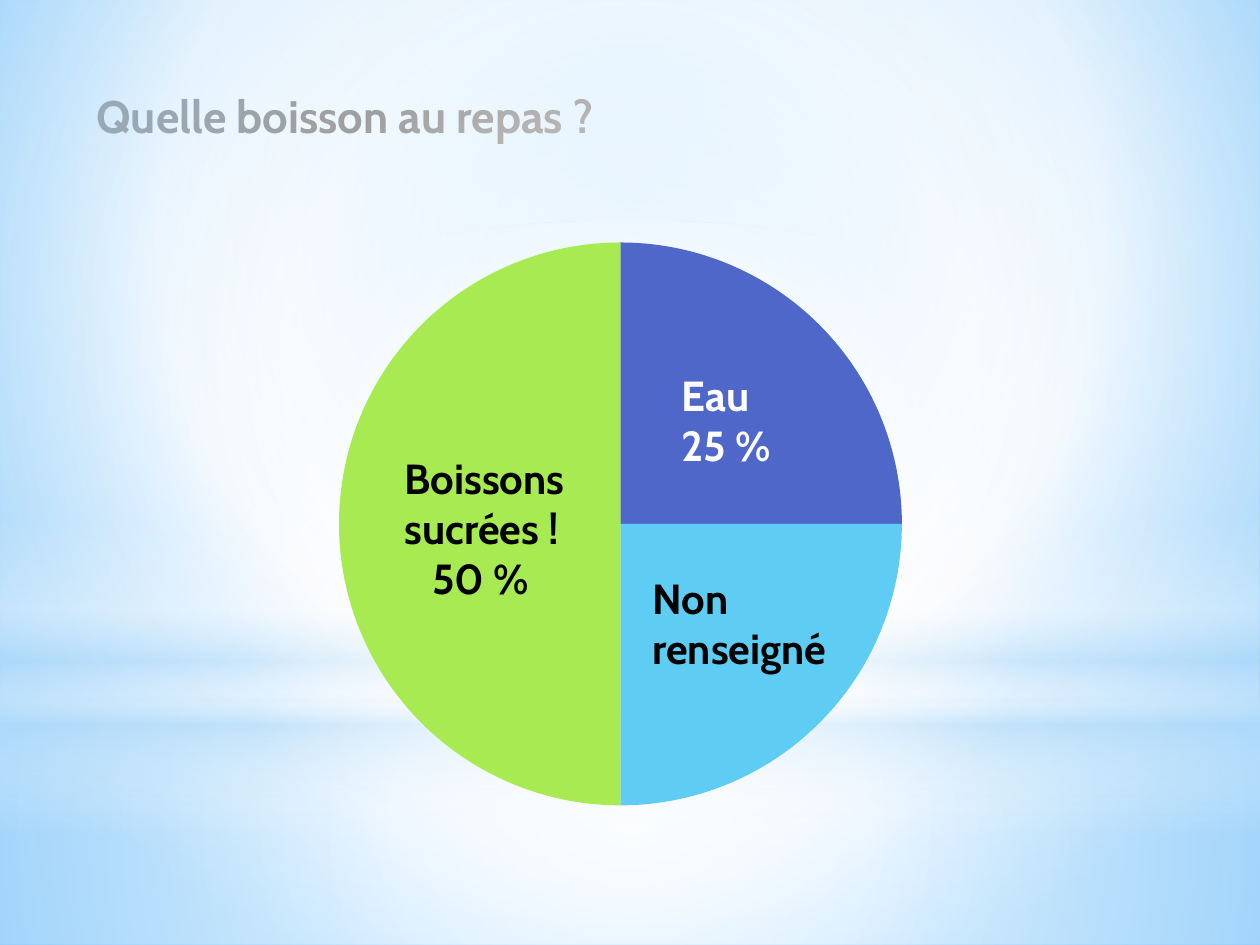
"""Build the slide with a pie chart of drinks taken at meals."""
from lxml import etree
from pptx import Presentation
from pptx.chart.data import CategoryChartData
from pptx.dml.color import RGBColor
from pptx.enum.chart import XL_CHART_TYPE
from pptx.enum.shapes import MSO_SHAPE
from pptx.enum.text import MSO_ANCHOR, MSO_AUTO_SIZE, PP_ALIGN
from pptx.oxml import parse_xml
from pptx.oxml.ns import nsdecls, qn
from pptx.util import Inches, Pt

SCALE = Inches(1) / 126
FONT = "Cabin"
BLACK = RGBColor(0x00, 0x00, 0x00)
WHITE = RGBColor(0xFF, 0xFF, 0xFF)
INDIGO = RGBColor(0x4E, 0x67, 0xC8)
SKY = RGBColor(0x5E, 0xCC, 0xF3)
GREEN = RGBColor(0xA7, 0xEA, 0x52)
PALE = RGBColor(0xB4, 0xDC, 0xFA)
LIGHT = RGBColor(0x9E, 0xD5, 0xFF)
AZURE = RGBColor(0x5B, 0xB9, 0xFF)


def px(*values):
    return [round(v * SCALE) for v in values]


def set_gradient(owner, stops, focus):
    gs = "".join(
        f'<a:gs pos="{pos * 1000}"><a:srgbClr val="{color}">'
        f'<a:alpha val="{alpha * 1000}"/></a:srgbClr></a:gs>'
        for pos, color, alpha in stops)
    if focus:
        l, t, r, b = (v * 1000 for v in focus)
        way = (f'<a:path path="circle"><a:fillToRect l="{l}" t="{t}" '
               f'r="{r}" b="{b}"/></a:path>')
    else:
        way = '<a:lin ang="5400000" scaled="0"/>'
    solid = owner.find(".//" + qn("a:solidFill"))
    solid.getparent().replace(solid, parse_xml(
        f'<a:gradFill {nsdecls("a")} rotWithShape="1">'
        f'<a:gsLst>{gs}</a:gsLst>{way}</a:gradFill>'))


prs = Presentation()
prs.slide_width, prs.slide_height = px(1260, 945)
s = prs.slides.add_slide(prs.slide_layouts[5])

s.background.fill.solid()
set_gradient(s.background._cSld, [(0, LIGHT, 100), (60, WHITE, 100), (100, AZURE, 100)],
             (20, 10, 20, 60))

CENTER = (50, 50, 50, 50)
glows = [
    (MSO_SHAPE.RECTANGLE, (0, 703, 1260, 242), CENTER,
     [(0, WHITE, 91), (37, WHITE, 76), (100, PALE, 79)]),
    (MSO_SHAPE.RECTANGLE, (0, 0, 1260, 703), CENTER,
     [(0, WHITE, 89), (48, WHITE, 62), (100, PALE, 79)]),
    (MSO_SHAPE.RECTANGLE, (0, 519, 1260, 315), None,
     [(0, WHITE, 0), (29, WHITE, 30), (45, PALE, 40),
      (55, WHITE, 26), (65, PALE, 60), (100, WHITE, 0)]),
    (MSO_SHAPE.OVAL, (0, 221, 1260, 703), CENTER,
     [(0, WHITE, 100), (56, WHITE, 0)]),
]
for kind, box, focus, stops in glows:
    sp = s.shapes.add_shape(kind, *px(*box))
    sp.shadow.inherit = False
    sp.line.fill.background()
    sp.fill.solid()
    set_gradient(sp._element.spPr, stops, focus)

data = CategoryChartData()
data.categories = ["1", "2", "3"]
data.add_series("Series 1", (25, 25, 50))
chart = s.shapes.add_chart(XL_CHART_TYPE.PIE, *px(194, 224, 853, 600), data).chart
chart.has_legend = False
chart.has_title = False
chart.font.name = FONT
chart.font.size = Pt(10)
chart.font.color.rgb = BLACK
plot = chart.plots[0]
plot.vary_by_categories = False
for i, color in enumerate((INDIGO, SKY, GREEN)):
    point = plot.series[0].points[i].format
    point.fill.solid()
    point.fill.fore_color.rgb = color
    point.line.fill.background()

area = chart._chartSpace.chart.plotArea
for old in area.findall(qn("c:layout")):
    area.remove(old)
layout = etree.Element(qn("c:layout"))
manual = etree.SubElement(layout, qn("c:manualLayout"))
for tag, val in (("layoutTarget", "inner"), ("xMode", "edge"), ("yMode", "edge"),
                 ("x", "0.17"), ("y", "0.03"), ("w", "0.66"), ("h", "0.94")):
    etree.SubElement(manual, qn("c:" + tag)).set("val", val)
area.insert(0, layout)

title = s.shapes.title
title.left, title.top, title.width, title.height = px(84, 82, 883, 68)
tf = title.text_frame
tf.text = "Quelle boisson au repas ?"
tf.auto_size = MSO_AUTO_SIZE.NONE
tf.vertical_anchor = MSO_ANCHOR.TOP
p = tf.paragraphs[0]
p.alignment = PP_ALIGN.LEFT
p.font.name = FONT
p.font.size = Pt(26)
p.font.bold = True
p.font.color.rgb = BLACK

labels = [
    ((392, 446, 268, 164), BLACK, [("Boissons sucrées !", 0), ("50 %", 28)]),
    ((669, 363, 218, 115), WHITE, [("Eau", 0), ("25 %", 0)]),
    ((640, 566, 228, 115), BLACK, [("Non renseigné", 0)]),
]
for box, color, lines in labels:
    tf = s.shapes.add_textbox(*px(*box)).text_frame
    tf.word_wrap = True
    tf.text = "\n".join(text for text, indent in lines)
    for p, (text, indent) in zip(tf.paragraphs, lines):
        p._p.get_or_add_pPr().set("marL", str(px(indent)[0]))
        p.font.name = FONT
        p.font.size = Pt(24)
        p.font.bold = True
        p.font.color.rgb = color

prs.save("out.pptx")
